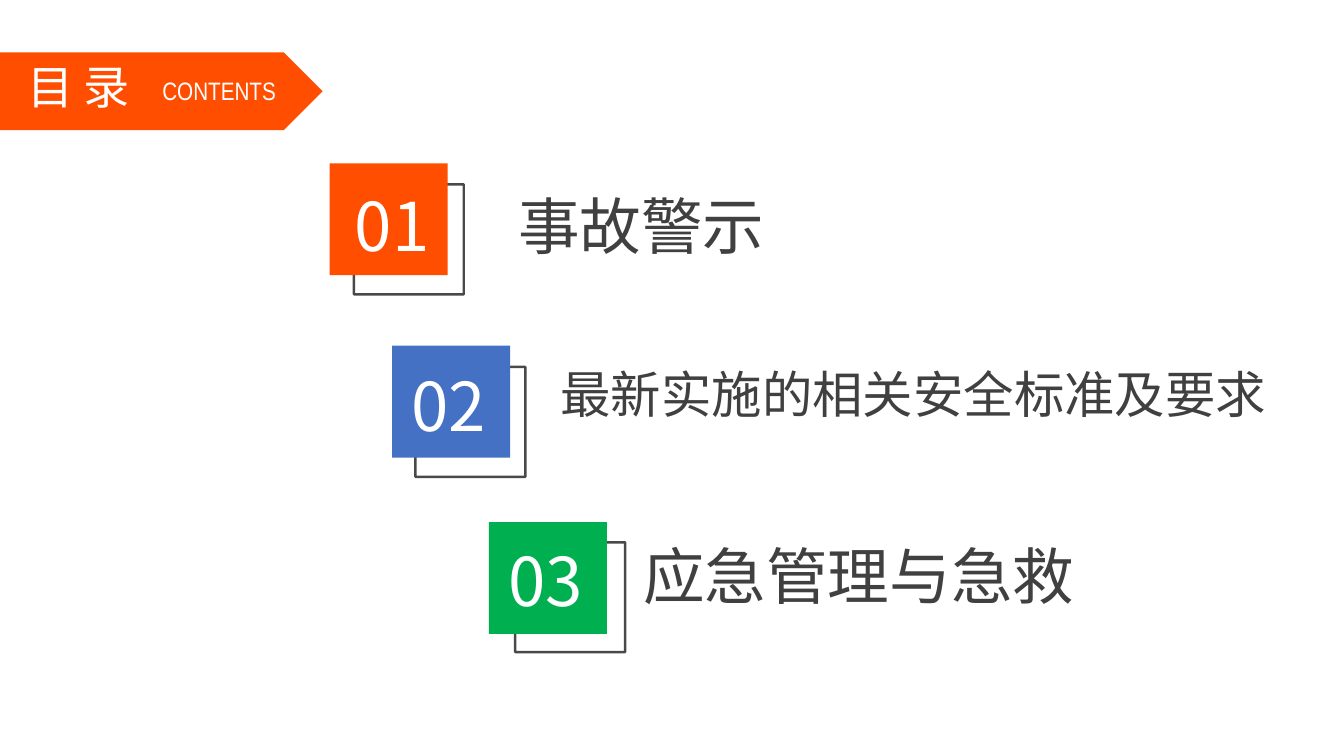
from dataclasses import dataclass
from typing import Any, Optional

from lxml.etree import SubElement
from pptx import Presentation
from pptx.dml.color import RGBColor as RGB
from pptx.enum.shapes import MSO_SHAPE as Shape
from pptx.enum.text import MSO_ANCHOR as Anchor, MSO_AUTO_SIZE as Fit, PP_ALIGN as Align
from pptx.oxml.ns import qn
from pptx.util import Inches, Pt

prs = Presentation()
prs.slide_width, prs.slide_height = Inches(13.33), Inches(7.5)
COLS, ROWS = 1333, 750
CJK, LATIN = "Noto Sans CJK SC", "Arial Narrow"
WHITE, DARK, ORANGE = "FFFFFF", "404040", "FF4E00"
TIGHT = dict(margin_left=Inches(0.07), margin_right=Inches(0.07),
             margin_top=Inches(0.04), margin_bottom=Inches(0.04),
             word_wrap=True, auto_size=Fit.SHAPE_TO_FIT_TEXT)
LOOSE = dict(word_wrap=False, auto_size=Fit.NONE)


@dataclass(frozen=True)
class Box:
    col: int
    row: int
    cols: int
    rows: int

    def place(self) -> tuple[int, int, int, int]:
        w, h = prs.slide_width, prs.slide_height
        return (w * self.col // COLS, h * self.row // ROWS,
                w * self.cols // COLS, h * self.rows // ROWS)


@dataclass(frozen=True)
class Entry:
    number: str
    title: str
    color: str
    col: int
    row: int
    frame: tuple[int, int]
    digits: tuple[int, int]
    title_box: Box
    size: int = 44
    anchor: Anchor = Anchor.TOP


def rgb(value: str) -> RGB:
    return RGB.from_string(value)


def apply(target: Any, values: dict[str, Any]) -> None:
    for name, value in values.items():
        setattr(target, name, value)


def add_shape(shapes: Any, kind: Shape, box: Box, fill: Optional[str] = None) -> Any:
    sp = shapes.add_shape(kind, *box.place())
    sp.shadow.inherit = False
    if fill:
        sp.fill.solid()
        sp.fill.fore_color.rgb = rgb(fill)
        sp.line.fill.background()
    else:
        sp.fill.background()
        sp.line.color.rgb = rgb(DARK)
        sp.line.width = Pt(1.75)
        color = sp.line.fill._xPr.find(".//" + qn("a:srgbClr"))
        SubElement(color, qn("a:alpha"), val="94000")
    return sp


def add_text(shapes: Any, box: Box, text: str, size: int, color: str,
             frame: dict[str, Any], para: Optional[dict[str, Any]] = None,
             font: str = CJK) -> None:
    tf = shapes.add_textbox(*box.place()).text_frame
    apply(tf, frame)
    p = tf.paragraphs[0]
    apply(p, para or {})
    r = p.add_run()
    r.text = text
    apply(r.font, dict(size=Pt(size), name=font))
    r.font.color.rgb = rgb(color)
    SubElement(r.font._element, qn("a:ea"), typeface=font)


def add_header(s: Any) -> None:
    shapes = s.shapes.add_group_shape().shapes
    add_shape(shapes, Shape.PENTAGON, Box(0, 52, 320, 77), ORANGE)
    add_text(shapes, Box(13, 54, 130, 63), "目 录", 33, WHITE, TIGHT,
             dict(alignment=Align.CENTER))
    add_text(shapes, Box(154, 71, 153, 38), "CONTENTS", 18, WHITE, TIGHT, font=LATIN)


def add_entry(s: Any, e: Entry) -> None:
    shapes = s.shapes.add_group_shape().shapes
    add_shape(shapes, Shape.RECTANGLE,
              Box(e.col + e.frame[0], e.row + e.frame[1], 109, 109))
    add_shape(shapes, Shape.RECTANGLE, Box(e.col, e.row, 117, 111), e.color)
    add_text(shapes, Box(e.col + e.digits[0], e.row + e.digits[1], 138, 112),
             e.number, 48, WHITE, TIGHT | dict(vertical_anchor=e.anchor),
             dict(line_spacing=1.3))
    add_text(s.shapes, e.title_box, e.title, e.size, DARK, LOOSE)


ENTRIES = [
    Entry("01", "事故警示", ORANGE, 327, 162, (24, 21), (18, -7),
          Box(504, 182, 245, 80), anchor=Anchor.MIDDLE),
    Entry("02", "最新实施的相关安全标准及要求", "4471C4", 389, 343, (23, 21), (12, -10),
          Box(546, 355, 685, 145), size=36),
    Entry("03", "应急管理与急救", "00B050", 485, 518, (26, 20), (12, -11),
          Box(628, 529, 401, 80)),
]


def main() -> None:
    s = prs.slides.add_slide(prs.slide_layouts[6])
    add_header(s)
    for e in ENTRIES:
        add_entry(s, e)
    prs.save("out.pptx")


if __name__ == "__main__":
    main()
